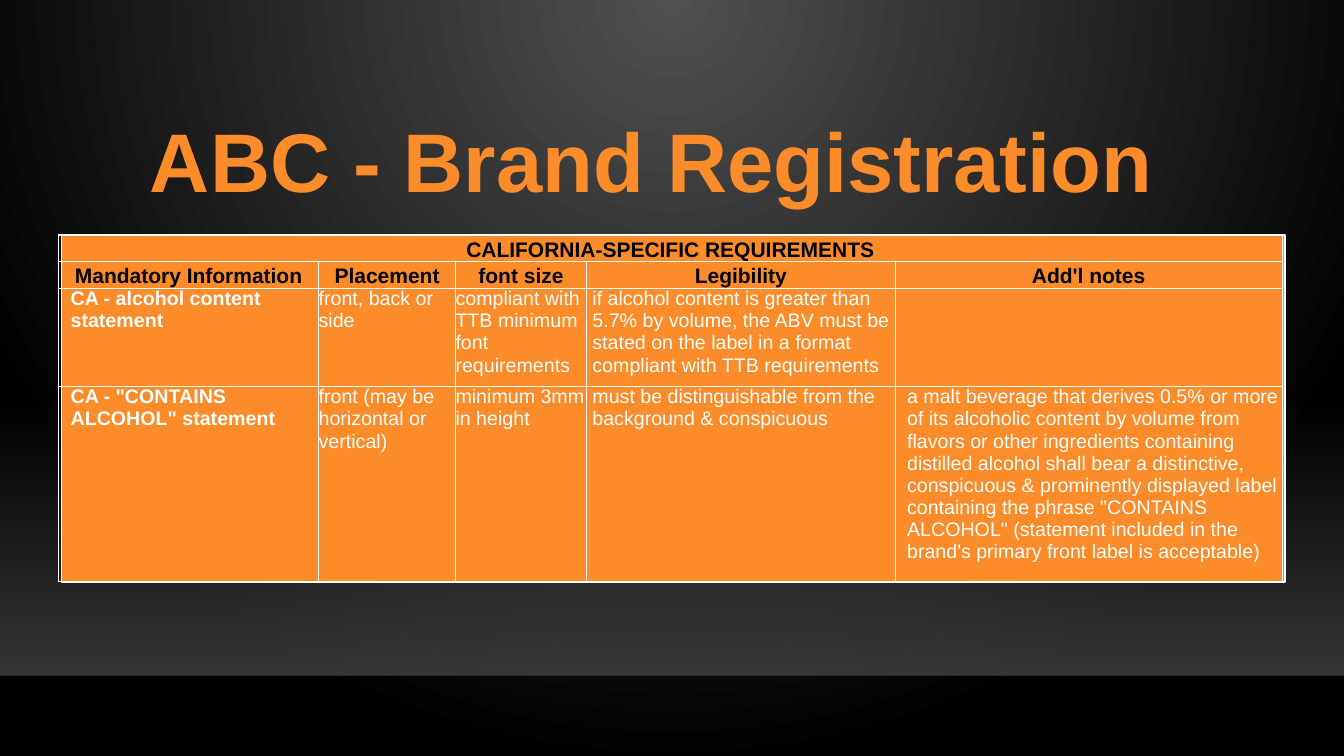
from lxml import etree
from pptx import Presentation
from pptx import util as u
from pptx.dml.color import RGBColor
from pptx.enum import shapes, text
from pptx.oxml import parse_xml
from pptx.oxml.ns import nsdecls, qn

ORANGE = RGBColor(0xFB, 0x8C, 0x29)
WHITE = RGBColor(0xFF, 0xFF, 0xFF)
BLACK = RGBColor(0, 0, 0)
NIGHT = RGBColor(0, 0, 1)
GLOW = RGBColor(0x50, 0x50, 0x50)
GRAY = RGBColor(0x45, 0x45, 0x45)

RADIAL = ('<a:path path="circle"><a:fillToRect l="43000" t="0" '
          'r="43000" b="100000"/></a:path>')
DOWN = '<a:lin ang="5400000" scaled="0"/>'

HEADS = ["Mandatory Information", "Placement", "font size", "Legibility", "Add'l notes"]
RULES = [
    ["CA - alcohol content statement",
     "front, back or side",
     "compliant with TTB minimum font requirements",
     "if alcohol content is greater than 5.7% by volume, the ABV must be stated "
     "on the label in a format compliant with TTB requirements",
     ""],
    ['CA - "CONTAINS ALCOHOL" statement',
     "front (may be horizontal or vertical)",
     "minimum 3mm in height",
     "must be distinguishable from the background & conspicuous",
     "a malt beverage that derives 0.5% or more of its alcoholic content by volume "
     "from flavors or other ingredients containing distilled alcohol shall bear a "
     "distinctive, conspicuous & prominently displayed label containing the phrase "
     '"CONTAINS ALCOHOL" (statement included in the brand\'s primary front label '
     "is acceptable)"],
]
WIDTHS = [6.55, 3.45, 3.3, 7.78, 9.75]
HEIGHTS = [0.67, 0.67, 2.47, 4.93]
INDENTS = [0.3, 0, 0, 0.15, 0.3]


class Deck:
    font = "Arial"

    def __init__(self, wide, high):
        self.prs = Presentation()
        self.prs.slide_width, self.prs.slide_height = u.Cm(wide), u.Cm(high)
        self.slide = self.prs.slides.add_slide(self.prs.slide_layouts[5])
        self.items = self.slide.shapes

    def blend(self, old, stops, shade):
        marks = "".join(
            f'<a:gs pos="{pos * 1000}"><a:srgbClr val="{tint}">'
            f'<a:alpha val="{alpha * 1000}"/></a:srgbClr></a:gs>'
            for pos, tint, alpha in stops)
        new = parse_xml(f'<a:gradFill {nsdecls("a")} rotWithShape="1">'
                        f'<a:gsLst>{marks}</a:gsLst>{shade}</a:gradFill>')
        old.getparent().replace(old, new)

    def back(self, stops):
        self.slide.background.fill.solid()
        old = self.slide.element.xpath(".//p:bgPr/a:solidFill")[0]
        self.blend(old, stops, RADIAL)

    def rect(self, box, fill, edge=None):
        item = self.items.add_shape(shapes.MSO_SHAPE.RECTANGLE, *map(u.Cm, box))
        item.shadow.inherit = False
        item.fill.solid()
        item.fill.fore_color.rgb = fill
        if edge:
            item.line.color.rgb = edge
            item.line.width = u.Pt(1.25)
        else:
            item.line.fill.background()
        return item

    def fade(self, box, stops):
        item = self.rect(box, stops[0][1])
        self.blend(item.element.xpath("./p:spPr/a:solidFill")[0], stops, DOWN)

    def rule(self, left, right, y, tint, alpha):
        line = self.items.add_connector(shapes.MSO_CONNECTOR.STRAIGHT,
                                        u.Cm(left), u.Cm(y), u.Cm(right), u.Cm(y))
        line.line.color.rgb = tint
        line.line.width = u.Pt(1)
        tone = line.element.xpath(".//a:ln//a:srgbClr")[0]
        etree.SubElement(tone, qn("a:alpha")).set("val", str(alpha * 1000))
        etree.SubElement(line.element.spPr, qn("a:effectLst"))

    def label(self, frame, words, size, tint, bold, align):
        para = frame.paragraphs[0]
        para.alignment = align
        run = para.add_run()
        run.text = words
        run.font.name, run.font.size, run.font.bold = self.font, u.Pt(size), bold
        run.font.color.rgb = tint

    def title(self, box, words, size):
        item = self.items.title
        item.left, item.top, item.width, item.height = map(u.Cm, box)
        frame = item.text_frame
        frame.word_wrap = True
        frame.auto_size = text.MSO_AUTO_SIZE.NONE
        frame.vertical_anchor = text.MSO_ANCHOR.BOTTOM
        frame.margin_left = frame.margin_right = u.Cm(0.25)
        frame.margin_top, frame.margin_bottom = u.Cm(0.13), 0
        self.label(frame, words, size, ORANGE, True, text.PP_ALIGN.LEFT)

    def cell(self, cell, words, head, bold, indent):
        cell.fill.background()
        props = cell._tc.get_or_add_tcPr()
        for spot, side in enumerate("LRTB"):
            props.insert(spot, parse_xml(
                f'<a:ln{side} {nsdecls("a")} w="12700"><a:solidFill>'
                f'<a:srgbClr val="{WHITE}"/></a:solidFill></a:ln{side}>'))
        cell.margin_left = u.Cm(indent)
        cell.margin_right = cell.margin_top = cell.margin_bottom = 0
        cell.vertical_anchor = text.MSO_ANCHOR.BOTTOM if head else text.MSO_ANCHOR.TOP
        if words:
            self.label(cell.text_frame, words, 15 if head else 14,
                       BLACK if head else WHITE, bold,
                       text.PP_ALIGN.CENTER if head else text.PP_ALIGN.LEFT)

    def table(self, left, top, rows):
        grid = self.items.add_table(
            len(rows), len(WIDTHS), u.Cm(left), u.Cm(top),
            u.Cm(sum(WIDTHS)), u.Cm(sum(HEIGHTS))).table
        grid.first_row = grid.horz_banding = False
        for col, wide in zip(grid.columns, WIDTHS):
            col.width = u.Cm(wide)
        for r, (row, high) in enumerate(zip(rows, HEIGHTS)):
            grid.rows[r].height = u.Cm(high)
            head = r < 2
            for c, words in enumerate(row):
                self.cell(grid.cell(r, c), words, head, head or c == 0,
                          0 if head else INDENTS[c])
        grid.cell(0, 0).merge(grid.cell(0, len(WIDTHS) - 1))


def main():
    deck = Deck(33.87, 19.05)
    deck.back([(0, GLOW, 100), (100, BLACK, 100)])
    deck.fade((0, 10.06, 33.87, 6.97), [(0, GRAY, 0), (100, GRAY, 80)])
    deck.rule(0, 33.87, 17.03, NIGHT, 20)
    deck.title((3.53, 0.89, 26.72, 4.39), "ABC - Brand Registration", 59.4)
    deck.rect((1.55, 5.92, 30.84, 8.74), ORANGE, WHITE)
    banner = ["CALIFORNIA-SPECIFIC REQUIREMENTS"] + [""] * 4
    deck.table(1.48, 5.92, [banner, HEADS] + RULES)
    deck.prs.save("out.pptx")


if __name__ == "__main__":
    main()
